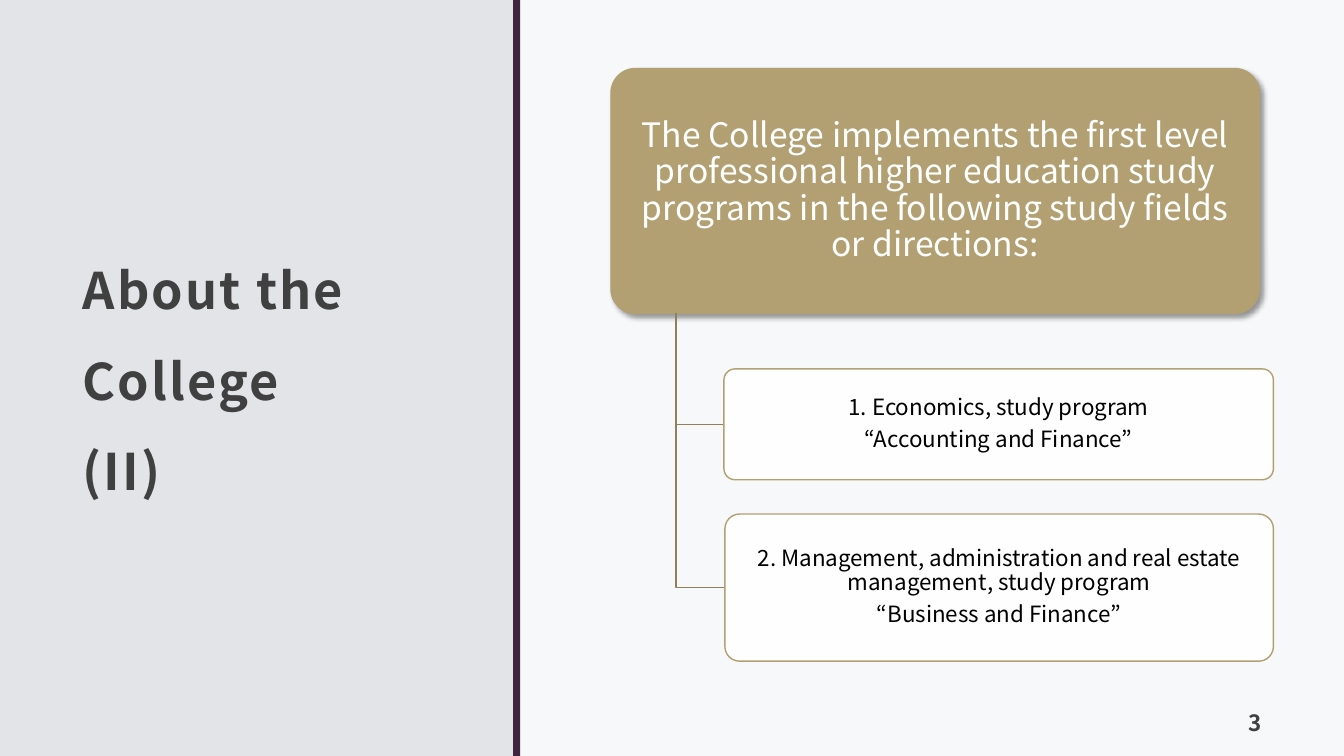
from lxml.etree import SubElement
from pptx import Presentation
from pptx.dml.color import RGBColor as RGB
from pptx.enum.shapes import MSO_SHAPE as SHAPE
from pptx.enum.text import MSO_ANCHOR as ANCHOR, PP_ALIGN as ALIGN
from pptx.oxml.ns import qn
from pptx.util import Inches, Pt

FONT = "Noto Sans CJK JP"
COLORS = {
    "background": "E2E4E8", "white": "FFFFFF", "bar": "41243F", "text": "404040",
    "gold": "B2A072", "branch": "8F805B", "black": "000000",
}
HEADING = "The College implements the first level professional higher education study programs in the following study fields or directions:"
PROGRAMS = [
    ((7.18, 3.66, 5.45, 1.1),
     ["1. Economics, study program", "“Accounting and Finance”"]),
    ((7.19, 5.1, 5.44, 1.46),
     ["2. Management, administration and real estate management, study program",
      "“Business and Finance”"]),
]


def rgb(name):
    return RGB.from_string(COLORS[name])


def add_block(s, kind, box, fill, alpha=None, line=None):
    sp = s.shapes.add_shape(kind, *map(Inches, box))
    sp.shadow.inherit = False
    sp.fill.solid()
    sp.fill.fore_color.rgb = rgb(fill)
    if alpha:
        color = sp._element.spPr.find(qn("a:solidFill"))[0]
        SubElement(color, qn("a:alpha"), val=str(alpha * 1000))
    if line:
        sp.line.color.rgb = rgb(line)
        sp.line.width = Pt(1)
    else:
        sp.line.fill.background()
    return sp


def set_frame(tf, anchor, left, top, right, bottom):
    tf.word_wrap = True
    tf.vertical_anchor = anchor
    tf.margin_left, tf.margin_top = Inches(left), Inches(top)
    tf.margin_right, tf.margin_bottom = Inches(right), Inches(bottom)


def add_run(p, text, size, color, bold=False, spacing=None):
    r = p.add_run()
    r.text = text
    r.font.name, r.font.size, r.font.bold = FONT, Pt(size), bold
    r.font.color.rgb = rgb(color)
    if spacing:
        r._r.get_or_add_rPr().set("spc", str(int(spacing * 100)))


def add_label(s, box, lines, size, align, anchor, line_spacing=1):
    """Bold, letter-spaced text whose lines are parted by line breaks."""
    tf = s.shapes.add_textbox(*map(Inches, box)).text_frame
    set_frame(tf, anchor, 0.12, 0.12, 0.12, 0.1)
    p = tf.paragraphs[0]
    p.alignment, p.line_spacing = align, line_spacing
    for i, line in enumerate(lines):
        if i:
            p.add_line_break()
        add_run(p, line, size, "text", bold=True, spacing=1.5)


def add_card(s, box, lines, size, color, margins, fill, alpha=None):
    sp = add_block(s, SHAPE.ROUNDED_RECTANGLE, box, fill, alpha, line="gold")
    sp.adjustments[0] = 0.1
    tf = sp.text_frame
    set_frame(tf, ANCHOR.MIDDLE, *margins)
    for i, line in enumerate(lines):
        p = tf.add_paragraph() if i else tf.paragraphs[0]
        p.alignment, p.line_spacing = ALIGN.CENTER, 0.9
        p.space_after = Pt(0.35 * size)
        add_run(p, line, size, color)
    return sp


def add_drop_shadow(sp):
    effects = sp._element.spPr.find(qn("a:effectLst"))
    shadow = SubElement(effects, qn("a:outerShdw"), blurRad=str(Pt(4)), dist=str(Pt(3)),
                        dir=str(45 * 60000), algn="tl", rotWithShape="0")
    color = SubElement(shadow, qn("a:srgbClr"), val=COLORS["black"])
    SubElement(color, qn("a:alpha"), val="40000")


def add_branch(s, x, top, end_x, end_y):
    """Elbow line going down from the heading and right to a program."""
    builder = s.shapes.build_freeform(Inches(x), Inches(top))
    corners = [(x, end_y), (end_x, end_y)]
    builder.add_line_segments([(Inches(a), Inches(b)) for a, b in corners], close=False)
    sp = builder.convert_to_shape()
    sp.shadow.inherit = False
    sp.fill.background()
    sp.line.color.rgb = rgb("branch")
    sp.line.width = Pt(1)


def add_backdrop(s, split, width, height, bar=0.07):
    s.background.fill.solid()
    s.background.fill.fore_color.rgb = rgb("background")
    add_block(s, SHAPE.RECTANGLE, (split, 0, width - split, height), "white", alpha=75)
    add_block(s, SHAPE.RECTANGLE, (split - bar, 0, bar, height), "bar")


def add_hierarchy(s, box):
    left, top, width, height = box
    heading = add_card(s, box, [HEADING], 24, "white", (0.05, 0.03, 0.05, 0.03), "gold")
    add_drop_shadow(heading)
    for card, lines in PROGRAMS:
        x, y, _, h = card
        add_branch(s, left + width / 10, top + height, x, y + h / 2)
        add_card(s, card, lines, 16, "black", (0.03, 0.02, 0.03, 0.02), "white", alpha=90)


def main():
    prs = Presentation()
    prs.slide_width, prs.slide_height = Inches(13.33), Inches(7.5)
    s = prs.slides.add_slide(prs.slide_layouts[6])
    add_backdrop(s, 5.16, 13.33, 7.5)
    add_label(s, (0.7, 0.77, 3.73, 5.68), ["About the College", "(II)"], 36,
              ALIGN.LEFT, ANCHOR.MIDDLE, line_spacing=1.5)
    add_hierarchy(s, (6.06, 0.68, 6.43, 2.43))
    add_label(s, (11.56, 6.9, 1.07, 0.5), ["3"], 16, ALIGN.RIGHT, ANCHOR.BOTTOM)
    prs.save("out.pptx")


if __name__ == "__main__":
    main()
